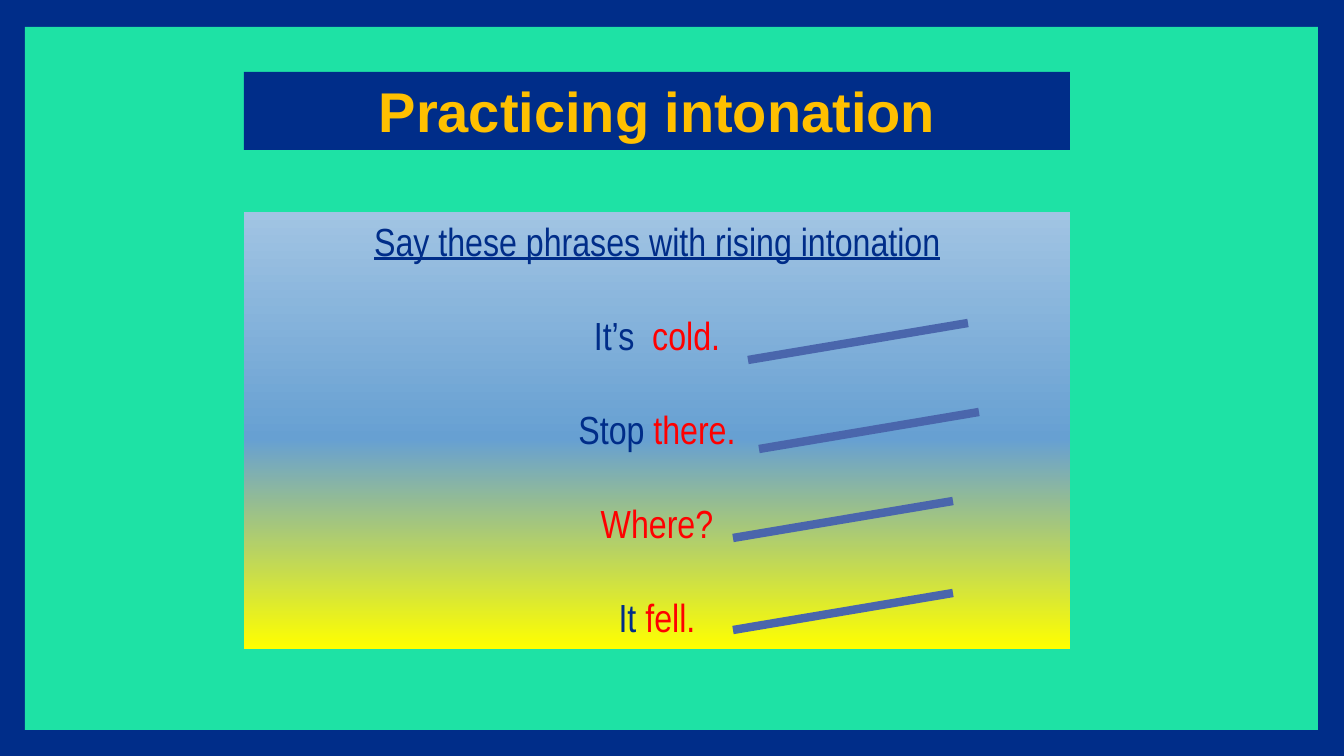
"""Build a slide for practising rising intonation."""
from copy import deepcopy
from dataclasses import dataclass

from lxml.etree import SubElement
from pptx import Presentation
from pptx.dml.color import RGBColor
from pptx.enum.shapes import MSO_CONNECTOR, MSO_SHAPE
from pptx.enum.text import MSO_ANCHOR, PP_ALIGN
from pptx.oxml.ns import qn
from pptx.shapes.autoshape import Shape
from pptx.slide import Slide
from pptx.util import Emu, Pt

HUES = {"navy": "002D89", "mint": "1EE2A5", "gold": "FFC000", "red": "FF0000",
        "rise": "4A66AC", "yellow": "FFFF00", "blue": "67A0D2", "pale": "A1C4E3"}
FADE = ((0, "yellow"), (0.48, "blue"), (1, "pale"))
RUN, CLIMB = 220, 37


@dataclass
class Box:
    left: int
    top: int
    width: int
    height: int


@dataclass
class Style:
    font: str
    size: int
    bold: bool = False
    under: bool = False


@dataclass
class Phrase:
    lead: str
    stress: str
    left: int
    low: int


FRAME = Box(25, 27, 1293, 703)
TITLE = Box(244, 72, 826, 78)
PANEL = Box(244, 212, 826, 437)
HEAD = Style("Arial", 40, bold=True)
TASK = Style("Arial Narrow", 28, under=True)
BODY = Style("Arial Narrow", 28)
PHRASES = (
    Phrase("It’s  ", "cold.", 748, 360),
    Phrase("Stop ", "there.", 759, 449),
    Phrase("", "Where?", 733, 538),
    Phrase("It ", "fell.", 733, 630),
)


def px(count: int) -> Emu:
    return Emu(round(count * 914400 / 100.8))


def hue(name: str) -> RGBColor:
    return RGBColor.from_string(HUES[name])


def add_box(slide: Slide, box: Box, fill: str) -> Shape:
    shape = slide.shapes.add_shape(MSO_SHAPE.RECTANGLE, px(box.left), px(box.top),
                                   px(box.width), px(box.height))
    shape.shadow.inherit = False
    shape.line.fill.background()
    shape.fill.solid()
    shape.fill.fore_color.rgb = hue(fill)
    shape.text_frame.word_wrap = True
    shape.text_frame.vertical_anchor = MSO_ANCHOR.TOP
    return shape


def add_fade(shape: Shape) -> None:
    fill = shape.fill
    fill.gradient()
    fill.gradient_angle = 90
    stops = shape._element.spPr.find(qn("a:gradFill")).find(qn("a:gsLst"))
    stops.append(deepcopy(stops[0]))
    for stop, (place, name) in zip(fill.gradient_stops, FADE):
        stop.position = place
        stop.color.rgb = hue(name)


def add_text(shape: Shape, style: Style, parts: list[tuple[str, str]],
             first: bool = False) -> None:
    frame = shape.text_frame
    para = frame.paragraphs[0] if first else frame.add_paragraph()
    para.alignment = PP_ALIGN.CENTER
    if not first:
        para.space_before = Pt(33.65)
    for text, name in parts:
        if text:
            run = para.add_run()
            run.text = text
            font = run.font
            font.name, font.size = style.font, Pt(style.size)
            font.bold, font.underline = style.bold, style.under
            font.color.rgb = hue(name)


def add_rise(slide: Slide, left: int, low: int) -> None:
    line = slide.shapes.add_connector(MSO_CONNECTOR.STRAIGHT, px(left), px(low),
                                      px(left + RUN), px(low - CLIMB))
    line.line.color.rgb = hue("rise")
    line.line.width = Pt(6)
    SubElement(line._element.spPr, qn("a:effectLst"))


def main() -> None:
    deck = Presentation()
    deck.slide_width, deck.slide_height = px(1344), px(756)
    slide = deck.slides.add_slide(deck.slide_layouts[6])
    slide.background.fill.solid()
    slide.background.fill.fore_color.rgb = hue("navy")
    add_box(slide, FRAME, "mint")
    title = add_box(slide, TITLE, "navy")
    add_text(title, HEAD, [("Practicing intonation", "gold")], first=True)
    panel = add_box(slide, PANEL, "pale")
    add_fade(panel)
    add_text(panel, TASK, [("Say these phrases with rising intonation", "navy")], first=True)
    for phrase in PHRASES:
        add_text(panel, BODY, [(phrase.lead, "navy"), (phrase.stress, "red")])
        add_rise(slide, phrase.left, phrase.low)
    deck.save("out.pptx")


if __name__ == "__main__":
    main()
